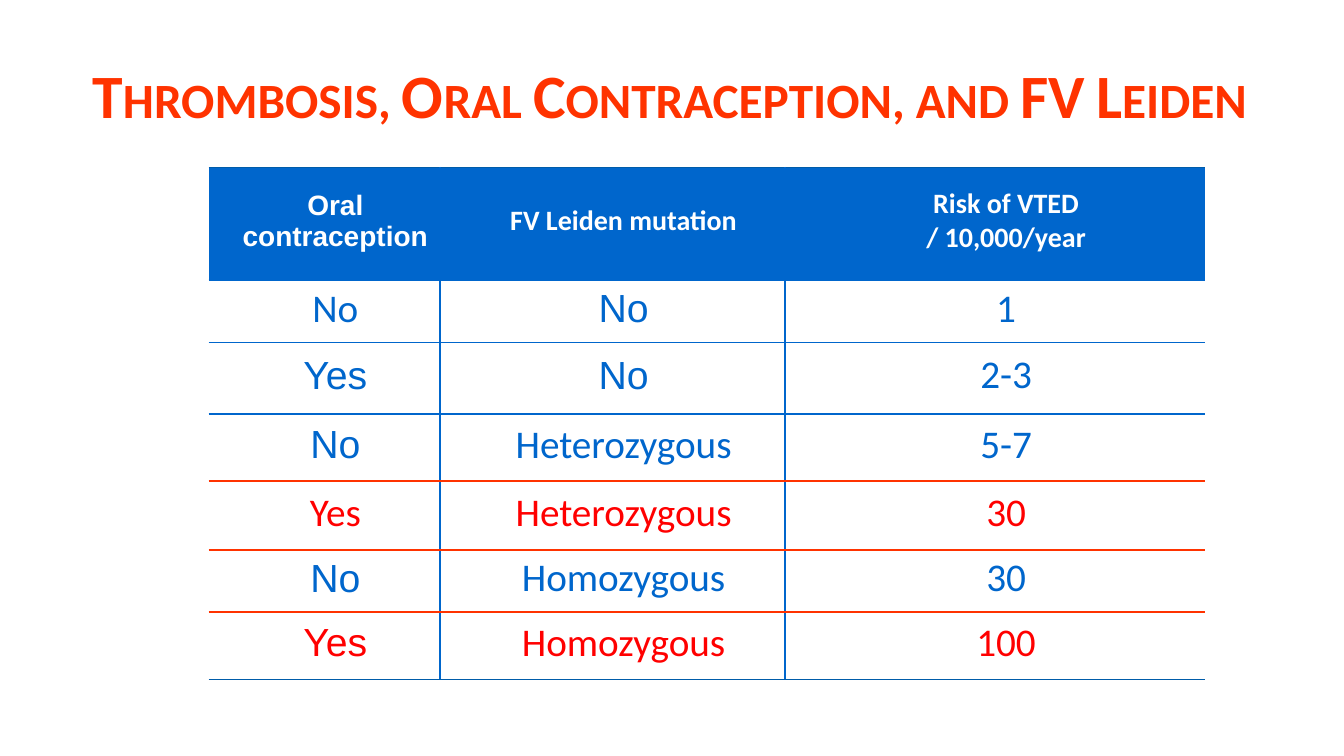
from typing import NamedTuple, Optional

from lxml import etree
from pptx import Presentation
from pptx import util as u
from pptx.dml.color import RGBColor
from pptx.enum import text
from pptx.oxml import ns

BLUE = RGBColor(0x00, 0x66, 0xCC)
NAVY = RGBColor(0x00, 0x5C, 0xA9)
ORANGE = RGBColor(0xFF, 0x33, 0x00)
RED = RGBColor(0xFF, 0x00, 0x00)
WHITE = RGBColor(0xFF, 0xFF, 0xFF)

SANS, BODY = "Arial", "Calibri"
PLAIN = "{2D5ABB26-0587-4C30-8999-92F81FD0307C}"  # table style without grid


class Rule(NamedTuple):
    color: RGBColor
    width: float = 1.5


class Row(NamedTuple):
    height: float
    texts: tuple[str, str, str]
    fonts: tuple[str, str, str]
    color: RGBColor
    below: Rule
    size: int = 28
    fill: Optional[RGBColor] = None


WIDTHS = (5.82, 8.71, 10.57)
ROWS = (
    Row(2.84, ("Oral contraception", "FV Leiden mutation", "Risk of VTED\n/ 10,000/year"),
        (SANS, BODY, BODY), WHITE, Rule(BLUE), 20, BLUE),
    Row(1.57, ("No", "No", "1"), (BODY, SANS, BODY), BLUE, Rule(BLUE)),
    Row(1.80, ("Yes", "No", "2-3"), (SANS, SANS, BODY), BLUE, Rule(BLUE)),
    Row(1.70, ("No", "Heterozygous", "5-7"), (SANS, BODY, BODY), BLUE, Rule(ORANGE)),
    Row(1.73, ("Yes", "Heterozygous", "30"), (BODY, BODY, BODY), RED, Rule(ORANGE)),
    Row(1.57, ("No", "Homozygous", "30"), (SANS, BODY, BODY), BLUE, Rule(ORANGE)),
    Row(1.68, ("Yes", "Homozygous", "100"), (SANS, BODY, BODY), RED, Rule(NAVY, 0.5)),
)


def write(frame, words: str, *, font: str, size: float, color: RGBColor,
          bold: bool = False, small: bool = False) -> None:
    """Fill a text frame with centred lines in one format."""
    frame.word_wrap = True
    for i, line in enumerate(words.split("\n")):
        para = frame.paragraphs[0] if i == 0 else frame.add_paragraph()
        para.alignment = text.PP_ALIGN.CENTER
        run = para.add_run()
        run.text = line
        run.font.name = font
        run.font.size = u.Pt(size)
        run.font.bold = bold
        run.font.color.rgb = color
        if small:
            run.font._element.set("cap", "small")


def edge(cell, sides: dict[str, Optional[Rule]]) -> None:
    """Set the cell borders, given in the order L, R, T, B."""
    props = cell._tc.get_or_add_tcPr()
    for i, (side, rule) in enumerate(sides.items()):
        line = etree.Element(ns.qn(f"a:ln{side}"))
        if rule is None:
            etree.SubElement(line, ns.qn("a:noFill"))
        else:
            line.set("w", str(u.Pt(rule.width)))
            fill = etree.SubElement(line, ns.qn("a:solidFill"))
            etree.SubElement(fill, ns.qn("a:srgbClr"), val=str(rule.color))
        props.insert(i, line)


def draw_title(slide) -> None:
    box = slide.shapes.add_textbox(u.Cm(-0.08), u.Cm(1.3), u.Cm(33.91), u.Cm(2.13))
    box.text_frame.vertical_anchor = text.MSO_ANCHOR.MIDDLE
    write(box.text_frame, "Thrombosis, Oral Contraception, and FV Leiden",
          font=BODY, size=44, color=ORANGE, bold=True, small=True)


def draw_table(slide) -> None:
    frame = slide.shapes.add_table(
        len(ROWS), len(WIDTHS), u.Cm(5.26), u.Cm(4.22),
        u.Cm(sum(WIDTHS)), u.Cm(sum(row.height for row in ROWS)))
    table = frame.table
    table.horz_banding = False
    table._tbl.tblPr.find(ns.qn("a:tableStyleId")).text = PLAIN
    for col, width in zip(table.columns, WIDTHS):
        col.width = u.Cm(width)

    above = Rule(NAVY, 1)
    last = len(WIDTHS) - 1
    for r, row in enumerate(ROWS):
        table.rows[r].height = u.Cm(row.height)
        for c, (words, font) in enumerate(zip(row.texts, row.fonts)):
            cell = table.cell(r, c)
            cell.vertical_anchor = text.MSO_ANCHOR.MIDDLE
            cell.margin_left, cell.margin_right = u.Cm(0.84), u.Cm(0.28)
            cell.margin_top, cell.margin_bottom = u.Cm(0), u.Cm(0.13)
            if row.fill is None:
                cell.fill.background()
            else:
                cell.fill.solid()
                cell.fill.fore_color.rgb = row.fill
            edge(cell, {"L": Rule(BLUE) if c > 0 else None,
                        "R": Rule(BLUE) if c < last else None,
                        "T": above, "B": row.below})
            write(cell.text_frame, words, font=font, size=row.size,
                  color=row.color, bold=r == 0)
        above = row.below


def main() -> None:
    deck = Presentation()
    deck.slide_width, deck.slide_height = u.Cm(33.87), u.Cm(19.05)
    slide = deck.slides.add_slide(deck.slide_layouts[6])
    draw_title(slide)
    draw_table(slide)
    deck.save("out.pptx")


if __name__ == "__main__":
    main()
